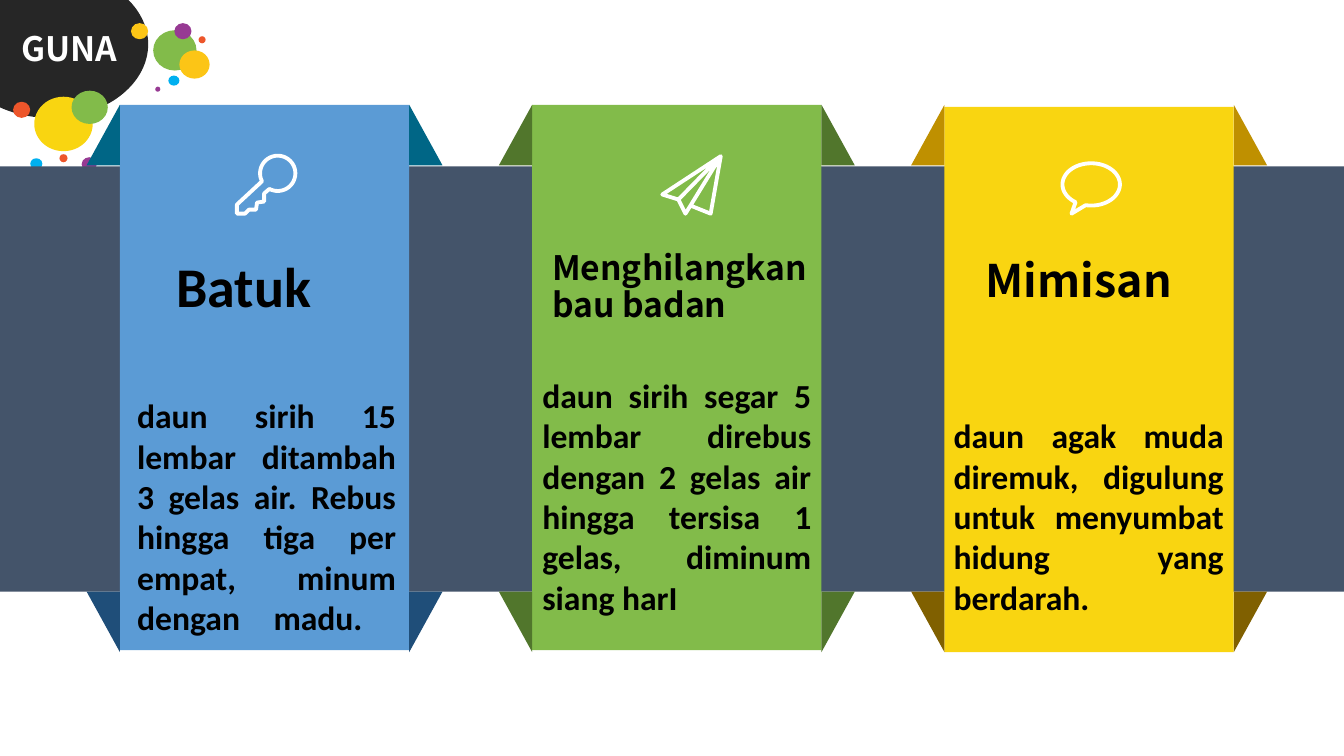
from math import cos, radians, sin

from lxml import etree
from pptx import Presentation
from pptx.dml.color import RGBColor
from pptx.enum.shapes import MSO_SHAPE
from pptx.enum.text import MSO_ANCHOR, MSO_AUTO_SIZE, PP_ALIGN
from pptx.oxml.ns import qn
from pptx.util import Inches, Pt

OVAL, RECT, CORNER = MSO_SHAPE.OVAL, MSO_SHAPE.RECTANGLE, MSO_SHAPE.RIGHT_TRIANGLE
LEFT, JUSTIFY = PP_ALIGN.LEFT, PP_ALIGN.JUSTIFY
TOP, NO_FIT = MSO_ANCHOR.TOP, MSO_AUTO_SIZE.NONE

WHITE = RGBColor(0xFF, 0xFF, 0xFF)
BLACK = RGBColor(0x00, 0x00, 0x00)
CHARCOAL = RGBColor(0x26, 0x26, 0x26)
SLATE = RGBColor(0x44, 0x54, 0x6A)
BLUE = RGBColor(0x5B, 0x9B, 0xD5)
TEAL = RGBColor(0x00, 0x66, 0x86)
NAVY = RGBColor(0x1F, 0x4E, 0x79)
GREEN = RGBColor(0x82, 0xBB, 0x4A)
MOSS = RGBColor(0x51, 0x76, 0x2C)
YELLOW = RGBColor(0xF9, 0xD5, 0x11)
OCHRE = RGBColor(0xBF, 0x90, 0x00)
BROWN = RGBColor(0x80, 0x60, 0x00)
ORANGE = RGBColor(0xED, 0x56, 0x2B)
AMBER = RGBColor(0xFC, 0xC5, 0x16)
PURPLE = RGBColor(0x97, 0x3A, 0x93)
SKY = RGBColor(0x00, 0xB0, 0xF0)

SANS, NOTO = "Calibri", "Noto Sans CJK SC"
COLS, ROWS = 133.33, 75
BAND_TOP, BAND_H = 16.5, 42.2
PANEL_W, PANEL_H = 28.7, 54.1
FOLD_TOP, FOLD_W, FOLD_H = 10.4, 3.3, 6.0

DOTS = [
    (1.3, 10.1, 1.7, 1.6, ORANGE), (3.4, 9.6, 5.8, 5.4, YELLOW),
    (7.1, 9.0, 3.6, 3.3, GREEN), (15.2, 3.0, 4.3, 4.0, GREEN),
    (13.0, 2.3, 1.7, 1.6, AMBER), (17.3, 2.3, 1.7, 1.6, PURPLE),
    (19.7, 3.6, 0.7, 0.7, ORANGE), (17.8, 5.0, 3.0, 2.8, AMBER),
    (16.7, 7.5, 1.1, 1.0, SKY), (15.4, 8.6, 0.5, 0.5, PURPLE),
    (11.2, 12.4, 3.6, 3.3, AMBER), (10.7, 12.3, 1.0, 0.9, SKY),
    (8.1, 15.6, 1.5, 1.4, PURPLE), (5.9, 15.3, 0.8, 0.8, ORANGE),
    (3.0, 15.7, 1.2, 1.1, SKY),
]
PANELS = [
    (11.9, 10.4, BLUE, TEAL, NAVY),
    (52.8, 10.4, GREEN, MOSS, MOSS),
    (93.7, 10.6, YELLOW, OCHRE, BROWN),
]
HEADINGS = [
    ("Batuk", (16.5, 25.2, 19.8, 4.7), SANS, 40),
    ("Menghilangkan bau badan", (53.8, 24.5, 28.9, 6.1), NOTO, 24),
    ("Mimisan", (96.8, 25.2, 22.8, 6.1), NOTO, 32),
]
REMEDIES = [
    ("daun sirih 15 lembar ditambah 3 gelas air. Rebus hingga tiga per empat, "
     "minum dengan madu. \v", (12.6, 38.7, 27.7, 29.3)),
    ("daun sirih segar 5 lembar direbus dengan 2 gelas air hingga tersisa 1 gelas, "
     "diminum siang harI", (52.8, 36.7, 28.7, 25.2)),
    ("daun agak muda diremuk, digulung untuk menyumbat hidung yang berdarah.",
     (93.6, 40.7, 28.8, 25.2)),
]


def arc(cx, cy, rx, ry, start, end, steps=60):
    angles = [radians(start + (end - start) * i / steps) for i in range(steps + 1)]
    return [(cx + rx * cos(a), cy + ry * sin(a)) for a in angles]


class Deck:
    def __init__(self):
        self.prs = Presentation()
        self.prs.slide_width, self.prs.slide_height = Inches(13.33), Inches(7.5)
        self.s = self.prs.slides.add_slide(self.prs.slide_layouts[4])
        self.slots = list(self.s.placeholders)

    def x(self, cols):
        return round(self.prs.slide_width * cols / COLS)

    def y(self, rows):
        return round(self.prs.slide_height * rows / ROWS)

    def box(self, x, y, w, h):
        return self.x(x), self.y(y), self.x(w), self.y(h)

    def paint(self, sp, color):
        sp.shadow.inherit = False
        sp.fill.solid()
        sp.fill.fore_color.rgb = color
        sp.line.fill.background()

    def shape(self, kind, box, color, flip_h=False, flip_v=False):
        sp = self.s.shapes.add_shape(kind, *self.box(*box))
        self.paint(sp, color)
        xfrm = sp.element.spPr.find(qn("a:xfrm"))
        for name, on in (("flipH", flip_h), ("flipV", flip_v)):
            if on:
                xfrm.set(name, "1")

    def outline(self, points, color):
        pts = [(self.x(x), self.y(y)) for x, y in points]
        builder = self.s.shapes.build_freeform(*pts[0])
        builder.add_line_segments(pts[1:], close=True)
        sp = builder.convert_to_shape()
        self.paint(sp, color)
        return sp

    def icon(self, points):
        sp = self.outline(points, WHITE)
        sp.fill.background()
        sp.line.color.rgb = WHITE
        sp.line.width = Pt(2.75)
        etree.SubElement(sp.element.spPr.find(qn("a:ln")), qn("a:round"))

    def panel(self, x, y, face, upper, lower):
        self.shape(RECT, (x, y, PANEL_W, PANEL_H), face)
        for top, color, flip_v in ((FOLD_TOP, upper, False), (BAND_TOP + BAND_H, lower, True)):
            for left, flip_h in ((x + PANEL_W, False), (x - FOLD_W, True)):
                self.shape(CORNER, (left, top, FOLD_W, FOLD_H), color, flip_h, flip_v)

    def set_text(self, sp, text, font, size, color, align=LEFT, spacing=1.0):
        tf = sp.text_frame
        tf.word_wrap, tf.auto_size, tf.vertical_anchor = True, NO_FIT, TOP
        p = tf.paragraphs[0]
        p.text = text
        p.alignment, p.line_spacing, p.space_before = align, spacing, Pt(0)
        p.font.name, p.font.size, p.font.bold = font, Pt(size), True
        p.font.color.rgb = color

    def textbox(self, text, box, font, size):
        sp = self.s.shapes.add_textbox(*self.box(*box))
        self.set_text(sp, text, font, size, BLACK, spacing=0.9)

    def placeholder(self, text, box, font, size, color, align=LEFT):
        sp = self.slots.pop(0)
        sp.left, sp.top, sp.width, sp.height = self.box(*box)
        sp.element.getparent().append(sp.element)
        self.set_text(sp, text, font, size, color, align)
        pPr = sp.element.find(".//" + qn("a:pPr"))
        pPr.set("marL", "0")
        pPr.set("indent", "0")
        pPr.find(qn("a:defRPr")).addprevious(etree.Element(qn("a:buNone")))

    def save(self):
        for sp in self.slots:
            sp.element.getparent().remove(sp.element)
        self.prs.save("out.pptx")


def main():
    deck = Deck()
    deck.outline([(0, 0)] + arc(5, 4.4, 9.7, 7.3, -37, 121), CHARCOAL)
    for *box, color in DOTS:
        deck.shape(OVAL, box, color)
    deck.placeholder("GUNA", (1.1, 2.3, 16.1, 5), NOTO, 24, WHITE)
    deck.shape(RECT, (0, BAND_TOP, COLS, BAND_H), SLATE)
    for panel in PANELS:
        deck.panel(*panel)
    for text, box in REMEDIES:
        deck.placeholder(text, box, SANS, 24, BLACK, JUSTIFY)
    for heading in HEADINGS:
        deck.textbox(*heading)

    tip, notch, fold = (71.5, 15.5), (67.3, 19.8), (68.5, 20.4)
    deck.icon([tip, (65.7, 19.3), notch, (68, 21.2), fold, (70.5, 21.2),
               tip, notch, tip, fold])
    deck.icon(arc(108.25, 18.3, 2.85, 2.1, 123, 461) + [(106.3, 21.2)])
    deck.icon(arc(27.55, 17.2, 1.75, 1.75, 153, 478)
              + [(26.2, 19.2), (26.2, 20), (25.5, 20.1), (25.4, 20.8), (24.7, 20.8),
                 (24.3, 21.2), (23.5, 21.2), (23.5, 20.3)])
    deck.save()


if __name__ == "__main__":
    main()
